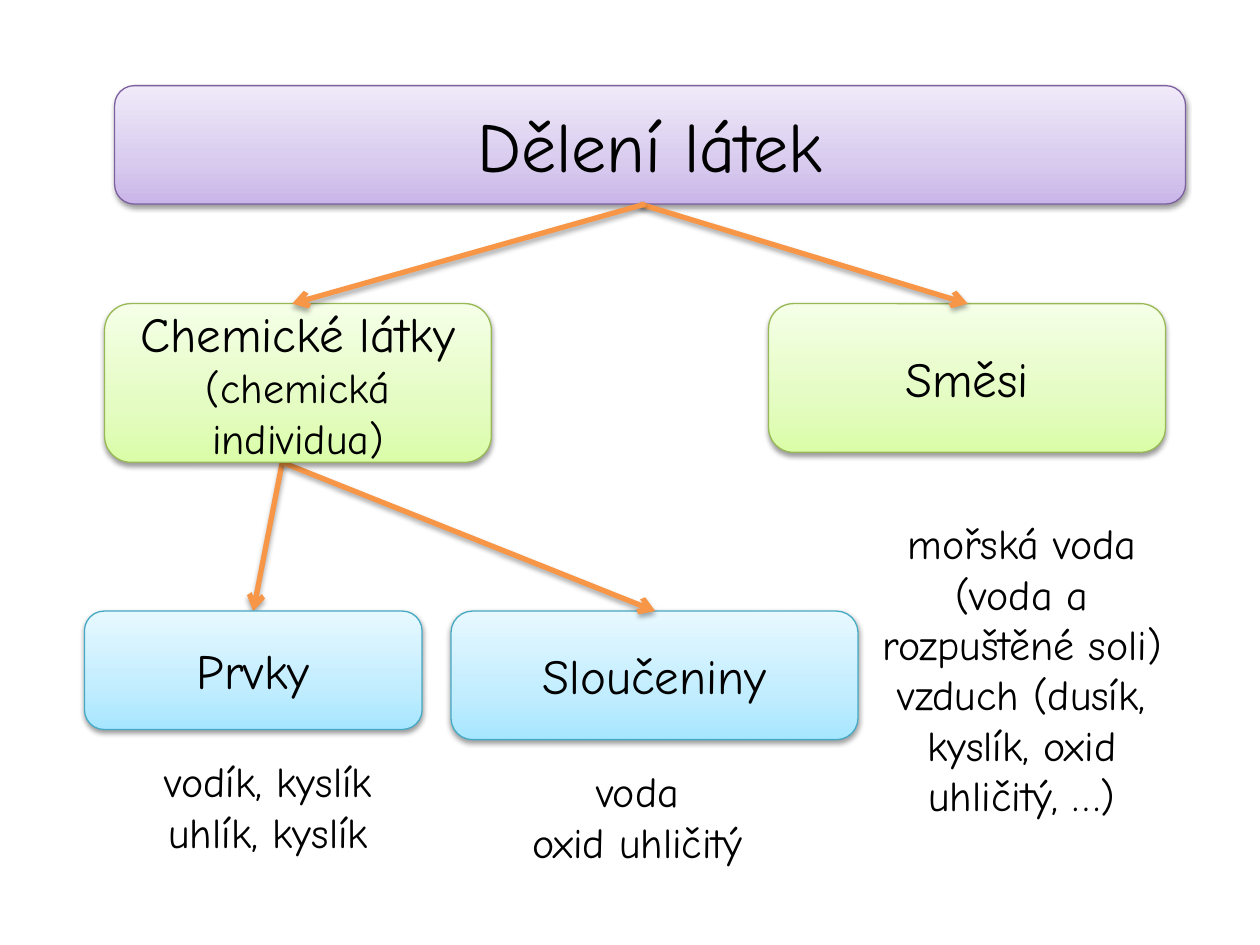
from copy import deepcopy
from typing import Any, NamedTuple

from lxml import etree
from pptx import Presentation
from pptx import util as u
from pptx.dml import color as col
from pptx.enum import shapes as sh, text as tx
from pptx.oxml import ns

FONT = "Comic Neue"
ORANGE = "F79646"
PURPLE = ("7D60A0", "C9B5E8", "D8CBEE", "F0EAF9")
GREEN = ("98B955", "DAFDA7", "E4FCC2", "F5FFE7")
BLUE = ("46AAC5", "A7E6FF", "C1EDFF", "E7F8FF")
STOPS = (0, 0.35, 1)


class Para(NamedTuple):
    text: str
    size: int = 24


class Box(NamedTuple):
    area: tuple[float, ...]
    tones: tuple[str, ...]
    paras: list[Para]


class Arrow(NamedTuple):
    start: tuple[float, float]
    end: tuple[float, float]


class Note(NamedTuple):
    area: tuple[float, ...]
    paras: list[Para]
    wrap: bool = True


ITEMS = [
    Box((0.91, 0.68, 8.5, 0.94), PURPLE, [Para("Dělení látek", 40)]),
    Box((3.58, 4.85, 3.23, 1.02), BLUE, [Para("Sloučeniny", 28)]),
    Box((6.1, 2.41, 3.15, 1.18), GREEN, [Para("Směsi", 28)]),
    Arrow((2.24, 3.67), (2.01, 4.85)),
    Arrow((2.24, 3.67), (5.2, 4.85)),
    Arrow((5.08, 1.62), (7.68, 2.41)),
    Box((0.83, 2.41, 3.07, 1.26), GREEN,
        [Para("Chemické látky", 28), Para("(chemická individua)")]),
    Arrow((5.12, 1.62), (2.32, 2.41)),
    Box((0.67, 4.85, 2.68, 0.94), BLUE, [Para("Prvky", 28)]),
    Note((0.83, 5.95, 2.6, 0.91), [Para("vodík, kyslík"), Para("uhlík, kyslík")]),
    Note((3.98, 6.03, 2.16, 0.91), [Para("voda"), Para("oxid uhličitý")], False),
    Note((6.89, 4.06, 2.44, 2.93),
         [Para("mořská voda (voda a rozpuštěné soli)"),
          Para("vzduch (dusík, kyslík, oxid uhličitý, …)")]),
]


def rgb(tone: str) -> col.RGBColor:
    return col.RGBColor.from_string(tone)


def inch(vals: tuple[float, ...]) -> list[u.Length]:
    return [u.Inches(v) for v in vals]


def apply(obj: Any, vals: dict[str, Any]) -> None:
    for name, val in vals.items():
        setattr(obj, name, val)


def node(root: Any, tag: str, **vals: str) -> Any:
    return etree.SubElement(root, ns.qn(f"a:{tag}"), vals)


def shade(list_: Any, alpha: int, dist: float) -> None:
    outer = node(list_, "outerShdw", blurRad=str(u.Pt(3.1)), dist=str(u.Pt(dist)),
                 dir="5400000", rotWithShape="0")
    node(node(outer, "srgbClr", val="000000"), "alpha", val=str(alpha * 1000))


def write(frame: Any, paras: list[Para], form: dict[str, Any]) -> None:
    apply(frame, form)
    for i, item in enumerate(paras):
        para = frame.add_paragraph() if i else frame.paragraphs[0]
        para.alignment = tx.PP_ALIGN.CENTER
        run = para.add_run()
        run.text = item.text
        apply(run.font, {"name": FONT, "size": u.Pt(item.size)})
        run.font.color.rgb = rgb("000000")


def draw_box(slide: Any, box: Box) -> None:
    shape = slide.shapes.add_shape(sh.MSO_SHAPE.ROUNDED_RECTANGLE, *inch(box.area))
    edge, *tones = box.tones
    fill = shape.fill
    fill.gradient()
    fill.gradient_angle = 90
    stops = shape.element.spPr.find(".//" + ns.qn("a:gsLst"))
    stops.append(deepcopy(stops[-1]))
    for stop, place, tone in zip(fill.gradient_stops, STOPS, tones):
        stop.position = place
        stop.color.rgb = rgb(tone)
    shape.line.color.rgb = rgb(edge)
    shape.line.width = u.Pt(0.75)
    shape.shadow.inherit = False
    shade(shape.element.spPr.find(ns.qn("a:effectLst")), 38, 1.6)
    write(shape.text_frame, box.paras,
          {"word_wrap": True, "vertical_anchor": tx.MSO_ANCHOR.MIDDLE})


def draw_arrow(slide: Any, arrow: Arrow) -> None:
    link = slide.shapes.add_connector(
        sh.MSO_CONNECTOR.STRAIGHT, *inch(arrow.start + arrow.end))
    link.line.color.rgb = rgb(ORANGE)
    link.line.width = u.Pt(3)
    props = link.element.spPr
    node(props.find(ns.qn("a:ln")), "tailEnd", type="arrow")
    shade(node(props, "effectLst"), 35, 1.8)


def draw_note(slide: Any, note: Note) -> None:
    frame = slide.shapes.add_textbox(*inch(note.area)).text_frame
    write(frame, note.paras,
          {"word_wrap": note.wrap, "auto_size": tx.MSO_AUTO_SIZE.SHAPE_TO_FIT_TEXT})


def main() -> None:
    deck = Presentation()
    apply(deck, {"slide_width": u.Inches(10), "slide_height": u.Inches(7.5)})
    slide = deck.slides.add_slide(deck.slide_layouts[6])
    tools = {Box: draw_box, Arrow: draw_arrow, Note: draw_note}
    for item in ITEMS:
        tools[type(item)](slide, item)
    deck.save("out.pptx")


if __name__ == "__main__":
    main()
